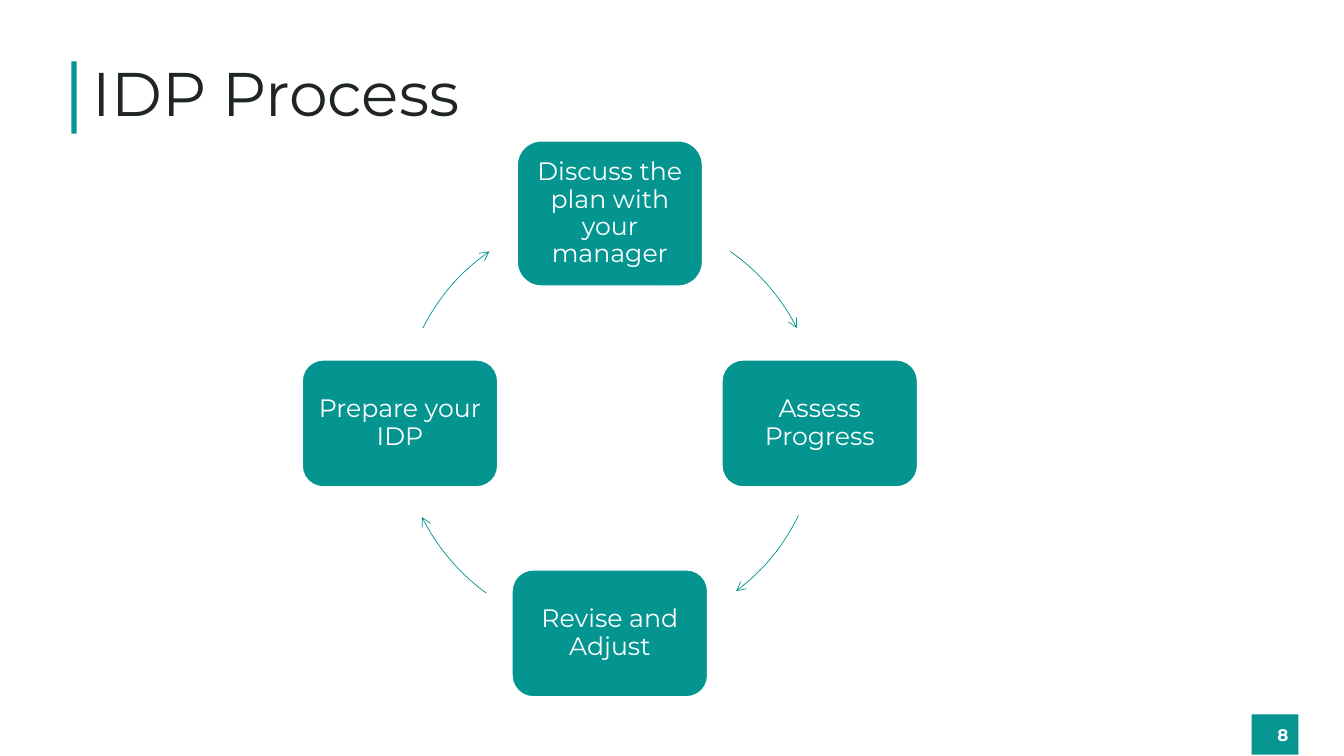
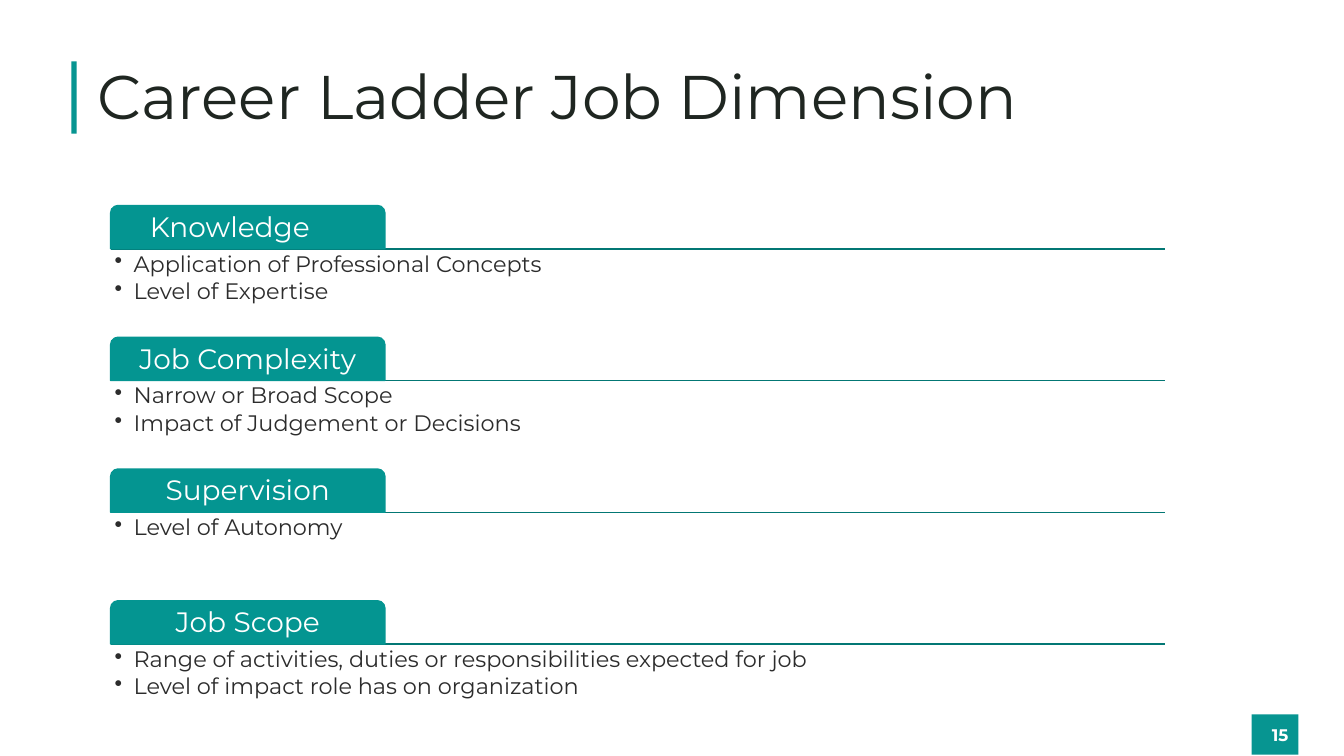
import math

from lxml import etree
from pptx import Presentation
from pptx.dml.color import RGBColor
from pptx.enum import shapes, text
from pptx.oxml import ns
from pptx.util import Cm, Pt

BAND = RGBColor(0x07, 0x95, 0x91)
TEAL = RGBColor(0x04, 0x95, 0x91)
RULE = RGBColor(0x03, 0x77, 0x74)
INK = RGBColor(0x1F, 0x26, 0x21)
BODY = RGBColor(0x2C, 0x2C, 0x2C)
WHITE = RGBColor(0xFF, 0xFF, 0xFF)
FONT = "Montserrat"
SHAPE = shapes.MSO_SHAPE
ALIGN = text.PP_ALIGN
ANCHOR = text.MSO_ANCHOR

CENTRE_X, CENTRE_Y, RADIUS = 15.37, 10.67, 5.29
STEPS = [
    ("Discuss the plan with your manager", 4.67, 3.66, (305, 333)),
    ("Assess Progress", 4.93, 3.2, (26, 53)),
    ("Revise and Adjust", 4.93, 3.2, (126, 153.5)),
    ("Prepare your IDP", 4.93, 3.2, (207, 235)),
]

LEFT, WIDTH, FIRST_RULE, PITCH = 2.79, 26.57, 6.27, 3.32
TAB_WIDTH, TAB_HEIGHT = 6.91, 1.09
DIMENSIONS = [
    ("Knowledge", 1.0, ["Application of Professional Concepts", "Level of Expertise"]),
    ("Job Complexity", 0.1, ["Narrow or Broad Scope", "Impact of Judgement or Decisions"]),
    ("Supervision", 0.1, ["Level of Autonomy"]),
    ("Job Scope", 0.1, ["Range of activities, duties or responsibilities expected for job",
                        "Level of impact role has on organization"]),
]


def apply(obj, values):
    for name, value in values.items():
        setattr(obj, name, value)


class Deck:
    """Holds the shared style and the slide being built."""

    def __init__(self):
        self.prs = Presentation()
        apply(self.prs, {"slide_width": Cm(33.87), "slide_height": Cm(19.05)})
        self.s = None

    def slide(self, title, number, left, top):
        self.s = self.prs.slides.add_slide(self.prs.slide_layouts[5])
        self.shape(SHAPE.RECTANGLE, 1.8, 1.55, 0.13, 1.82, BAND)
        sp = self.shape(SHAPE.RECTANGLE, 31.54, 18, 1.18, 1.02, BAND)
        self.fill_text(sp.text_frame, [number], 12, WHITE, font={"bold": True},
                       para={"alignment": ALIGN.RIGHT})
        sp = self.s.shapes.title
        apply(sp, {"left": Cm(left), "top": Cm(top), "width": Cm(29.21), "height": Cm(3.38)})
        self.fill_text(sp.text_frame, [title], 44, INK,
                       para={"alignment": ALIGN.LEFT, "line_spacing": 0.9})

    def shape(self, kind, x, y, w, h, fill=None, line=None, weight=1):
        sp = self.s.shapes.add_shape(kind, Cm(x), Cm(y), Cm(w), Cm(h))
        sp.shadow.inherit = False
        for part, color in ((sp.fill, fill), (sp.line.fill, line)):
            if color is None:
                part.background()
            else:
                part.solid()
                part.fore_color.rgb = color
        if line is not None:
            sp.line.width = Pt(weight)
        return sp

    def fill_text(self, tf, lines, size, color, anchor=ANCHOR.MIDDLE, inset=None,
                  para=None, font=None):
        apply(tf, {"word_wrap": True, "auto_size": text.MSO_AUTO_SIZE.NONE,
                   "vertical_anchor": anchor})
        if inset is not None:
            for side in ("left", "top", "right", "bottom"):
                setattr(tf, "margin_" + side, Cm(inset))
        for i, line in enumerate(lines):
            p = tf.add_paragraph() if i else tf.paragraphs[0]
            apply(p, para or {})
            r = p.add_run()
            r.text = line
            apply(r.font, {"name": FONT, "size": Pt(size), **(font or {})})
            r.font.color.rgb = color

    def label(self, sp, line, size, inset):
        self.fill_text(sp.text_frame, [line], size, WHITE, inset=inset,
                       para={"alignment": ALIGN.CENTER, "line_spacing": 0.9,
                             "space_after": Pt(size * 0.35)})

    def arc_arrow(self, x, y, radius, start, end):
        sp = self.shape(SHAPE.ARC, x - radius, y - radius, 2 * radius, 2 * radius,
                        line=TEAL, weight=0.5)
        for i, angle in enumerate((start, end)):
            sp.adjustments[i] = angle * 0.6
        ln = sp._element.spPr.find(ns.qn("a:ln"))
        etree.SubElement(ln, ns.qn("a:tailEnd"), type="arrow")

    def rule(self, x, y, w):
        cx = self.s.shapes.add_connector(shapes.MSO_CONNECTOR.STRAIGHT,
                                         Cm(x), Cm(y), Cm(x + w), Cm(y))
        cx.line.color.rgb = RULE
        cx.line.width = Pt(1)
        etree.SubElement(cx._element.spPr, ns.qn("a:effectLst"))

    def bullets(self, x, y, w, h, lines):
        tf = self.s.shapes.add_textbox(Cm(x), Cm(y), Cm(w), Cm(h)).text_frame
        self.fill_text(tf, lines, 16, BODY, anchor=ANCHOR.TOP, inset=0.1,
                       para={"level": 1, "line_spacing": 0.9, "space_after": Pt(2.4)})
        for p in tf.paragraphs:
            pr = p._p.get_or_add_pPr()
            pr.set("marL", str(int(Cm(0.48))))
            pr.set("indent", str(-int(Cm(0.48))))
            etree.SubElement(pr, ns.qn("a:buChar"), char="•")


def process_slide(deck):
    deck.slide("IDP Process", "8", 2.08, 0.74)
    for i, (step, w, h, angles) in enumerate(STEPS):
        turn = math.radians(90 * i - 90)
        x = CENTRE_X + RADIUS * math.cos(turn)
        y = CENTRE_Y + RADIUS * math.sin(turn)
        sp = deck.shape(SHAPE.ROUNDED_RECTANGLE, x - w / 2, y - h / 2, w, h, TEAL, WHITE)
        deck.label(sp, step, 18, 0.18)
        deck.arc_arrow(CENTRE_X, CENTRE_Y, RADIUS, *angles)


def dimension_slide(deck):
    deck.slide("Career Ladder Job Dimension", "15", 2.21, 0.82)
    for i, (name, right_inset, points) in enumerate(DIMENSIONS):
        y = FIRST_RULE + i * PITCH
        deck.rule(LEFT, y, WIDTH)
        sp = deck.shape(SHAPE.ROUND_2_SAME_RECTANGLE, LEFT, y - TAB_HEIGHT,
                        TAB_WIDTH, TAB_HEIGHT, TEAL, TEAL)
        deck.label(sp, name, 20, 0.1)
        sp.text_frame.margin_right = Cm(right_inset)
        deck.bullets(LEFT, y, WIDTH, 2.18, points)


def main():
    deck = Deck()
    process_slide(deck)
    dimension_slide(deck)
    deck.prs.save("out.pptx")


if __name__ == "__main__":
    main()
